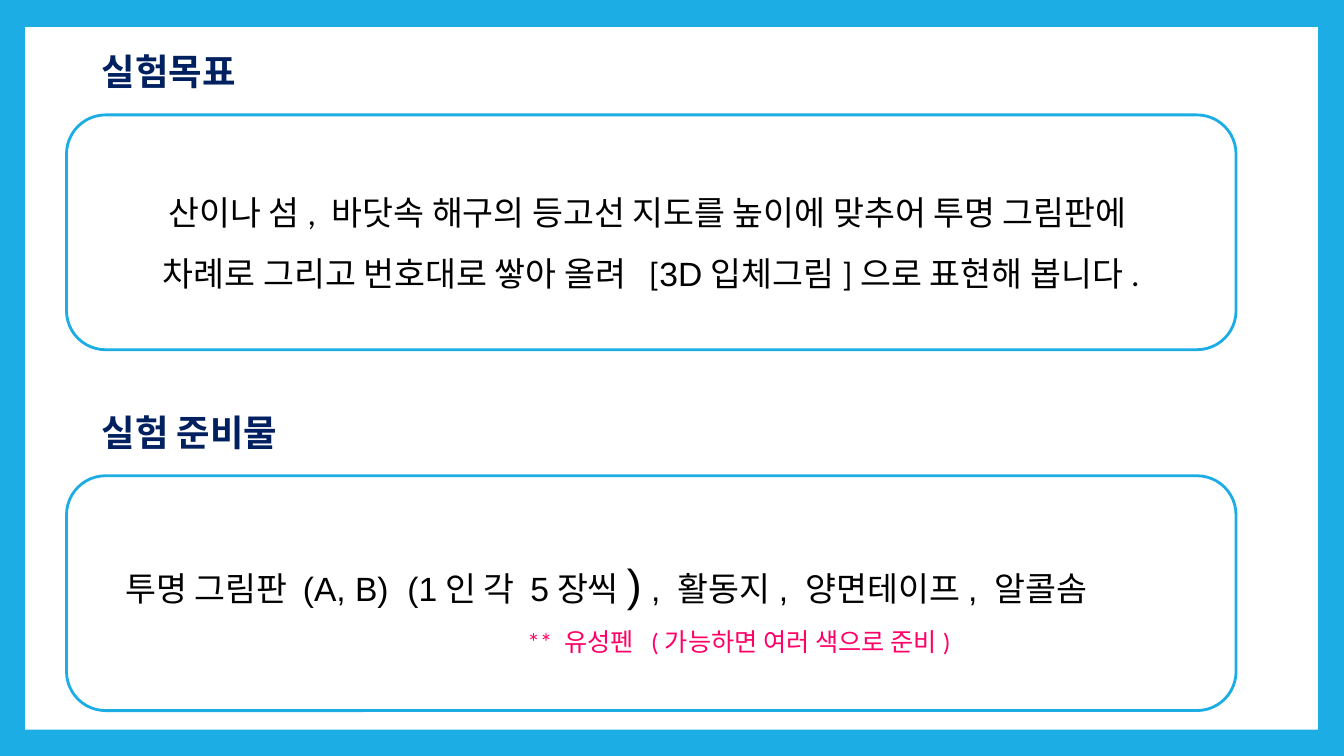
from pptx import Presentation
from pptx.dml.color import RGBColor
from pptx.enum import shapes, text
from pptx.util import Inches, Pt

THEME = {
    "blue": "1CADE4", "white": "FFFFFF", "navy": "002060",
    "black": "000000", "pink": "FF0066",
    "title": 26, "body": 24, "bracket": 32, "note": 18,
    "font": "Calibri", "alt_font": "Arial",
}

# Run: (text, font, size, colour)
# Paragraph: (alignment, indent in inches, runs)
BODY = ("font", "body", "black")
ALT = ("alt_font", "body", "black")
SECTIONS = [
    ("실험목표", 1.96, [
        ("CENTER", 0, [("산이나 섬, 바닷속 해구의 등고선 지도를 높이에 맞추어 투명 그림판에 ", *BODY)]),
        ("CENTER", 0, [("차례로 그리고 번호대로 쌓아 올려  [", *BODY),
                       ("3D", *ALT),
                       ("입체그림]으로 표현해 봅니다.", *BODY)]),
    ]),
    ("실험 준비물", 2.3, [
        ("LEFT", 0.37, [("투명 ", *BODY),
                        ("그림판 (A, B)  (1인 각 5장씩", *ALT),
                        (")", "alt_font", "bracket", "black"),
                        (" , 활동지, 양면테이프, 알콜솜", *ALT)]),
        ("LEFT", 4.36, [("** 유성펜  (가능하면 여러 색으로 준비)", "font", "note", "pink")]),
    ]),
]

FRAME = (0.25, 0.27, 12.82, 6.97)
TITLE_LEFT, TITLE_TOP, TITLE_HEIGHT = 0.91, 0.39, 0.48
PANEL_LEFT, PANEL_WIDTH, PANEL_HEIGHT = 0.66, 11.6, 2.33
PANEL_DROP = 0.75
SECTION_PITCH = 3.58


def color(name):
    return RGBColor.from_string(THEME[name])


def add_run(p, content, font, size, ink, bold=False):
    r = p.add_run()
    r.text = content
    r.font.name = THEME[font]
    r.font.size = Pt(THEME[size])
    r.font.bold = bold
    r.font.color.rgb = color(ink)


def add_box(slide, kind, box):
    sp = slide.shapes.add_shape(kind, *map(Inches, box))
    sp.shadow.inherit = False
    sp.fill.solid()
    sp.fill.fore_color.rgb = color("white")
    return sp


def add_title(slide, title, top, width):
    sp = slide.shapes.add_textbox(*map(Inches, (TITLE_LEFT, top, width, TITLE_HEIGHT)))
    tf = sp.text_frame
    tf.word_wrap = True
    tf.margin_left = tf.margin_right = tf.margin_top = tf.margin_bottom = Inches(0.1)
    add_run(tf.paragraphs[0], title, "font", "title", "navy", bold=True)


def add_panel(slide, top, paragraphs):
    sp = add_box(slide, shapes.MSO_SHAPE.ROUNDED_RECTANGLE,
                 (PANEL_LEFT, top, PANEL_WIDTH, PANEL_HEIGHT))
    sp.line.color.rgb = color("blue")
    sp.line.width = Pt(2)
    tf = sp.text_frame
    tf.word_wrap = True
    tf.vertical_anchor = text.MSO_ANCHOR.MIDDLE
    for i, (align, indent, runs) in enumerate(paragraphs):
        p = tf.add_paragraph() if i else tf.paragraphs[0]
        p.alignment = text.PP_ALIGN[align]
        p.line_spacing = 1.5
        p._p.get_or_add_pPr().set("marL", str(Inches(indent)))
        for run in runs:
            add_run(p, *run)


def main():
    prs = Presentation()
    prs.slide_width, prs.slide_height = Inches(13.33), Inches(7.5)
    slide = prs.slides.add_slide(prs.slide_layouts[6])
    slide.background.fill.solid()
    slide.background.fill.fore_color.rgb = color("blue")

    frame = add_box(slide, shapes.MSO_SHAPE.RECTANGLE, FRAME)
    frame.line.fill.background()

    for i, (title, width, paragraphs) in enumerate(SECTIONS):
        top = TITLE_TOP + i * SECTION_PITCH
        add_title(slide, title, top, width)
        add_panel(slide, top + PANEL_DROP, paragraphs)

    prs.save("out.pptx")


if __name__ == "__main__":
    main()
